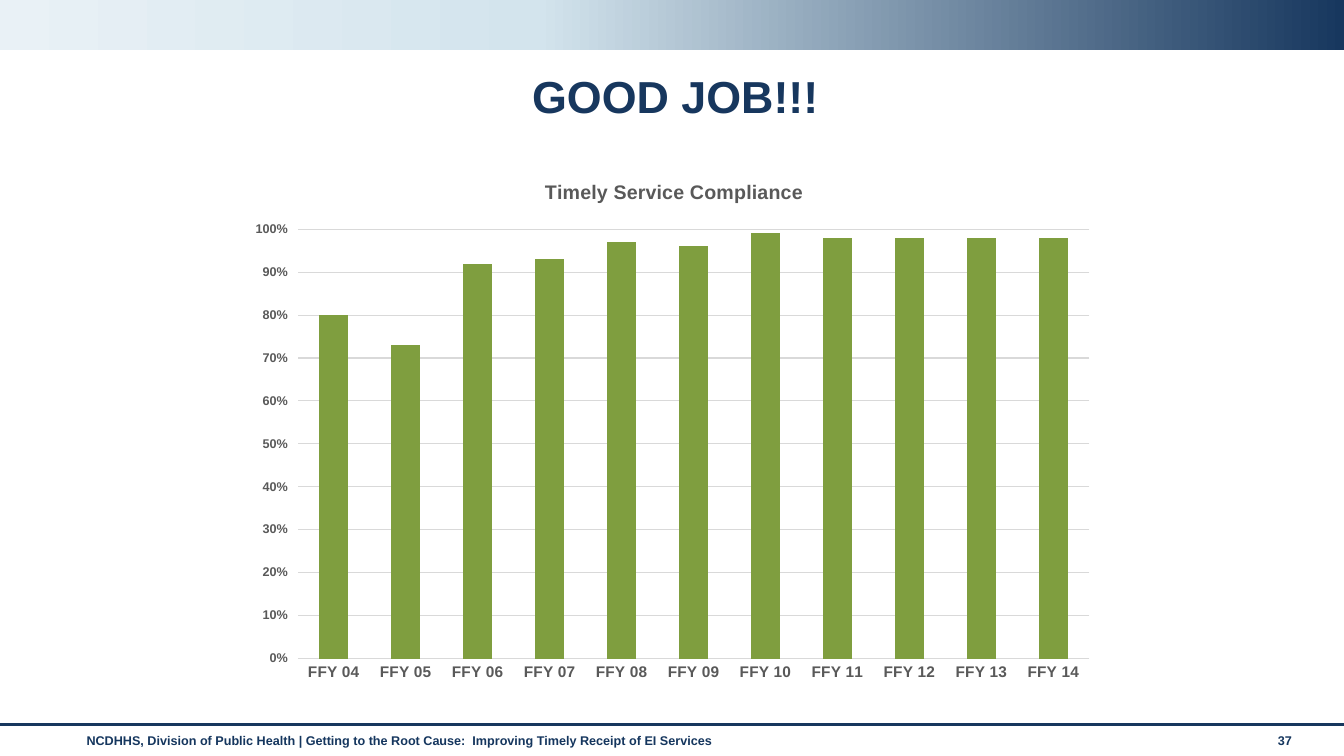
from dataclasses import dataclass

from lxml import etree
from pptx import Presentation
from pptx import util as u
from pptx.chart.data import CategoryChartData
from pptx.dml.color import RGBColor
from pptx.enum import chart as ch, shapes, text
from pptx.oxml import parse_xml
from pptx.oxml.ns import nsdecls, qn


@dataclass(frozen=True)
class Theme:
    font: str = "Arial"
    navy: str = "17375E"
    footer: str = "15365E"
    gray: str = "595959"
    grid: str = "D9D9D9"
    green: str = "7F9E3F"
    band: tuple = ((0, "17375E"), (60, "D3E4ED"), (100, "E9F1F6"))
    title_size: int = 32
    chart_title_size: int = 14
    category_size: int = 11
    small_size: int = 9


class Deck:
    """Draws styled elements on one slide, placed on an 80 by 45 grid."""

    COLS, ROWS = 80, 45

    def __init__(self, theme):
        self.t = theme
        self.prs = Presentation()
        self.prs.slide_width, self.prs.slide_height = u.Inches(13.33), u.Inches(7.5)
        self.s = self.prs.slides.add_slide(self.prs.slide_layouts[6])

    def box(self, col, row, cols, rows):
        w = self.prs.slide_width / self.COLS
        h = self.prs.slide_height / self.ROWS
        return [u.Emu(round(v)) for v in (col * w, row * h, cols * w, rows * h)]

    def style(self, font, size, color):
        font.name, font.size, font.bold = self.t.font, u.Pt(size), True
        font.color.rgb = RGBColor.from_string(color)

    def stroke(self, line, color, width):
        line.color.rgb = RGBColor.from_string(color)
        line.width = u.Pt(width)

    def label(self, place, words, size, color, align=text.PP_ALIGN.LEFT,
              anchor=text.MSO_ANCHOR.TOP, spacing=1.0):
        tf = self.s.shapes.add_textbox(*self.box(*place)).text_frame
        tf.word_wrap, tf.vertical_anchor = True, anchor
        p = tf.paragraphs[0]
        p.alignment, p.line_spacing = align, spacing
        r = p.add_run()
        r.text = words
        self.style(r.font, size, color)

    def gradient_band(self, place, stops, angle):
        sp = self.s.shapes.add_shape(shapes.MSO_SHAPE.RECTANGLE, *self.box(*place))
        sp.shadow.inherit = False
        sp.line.fill.background()
        sp.fill.gradient()
        sp.fill.gradient_angle = angle
        gs_list = next(sp._element.iter(qn("a:gsLst")))
        for gs in list(gs_list):
            gs_list.remove(gs)
        for pos, color in stops:
            gs = etree.SubElement(gs_list, qn("a:gs"), pos=str(pos * 1000))
            etree.SubElement(gs, qn("a:srgbClr"), val=color)

    def rule(self, row, color, width):
        x, y, w, _ = self.box(0, row, self.COLS, 0)
        line = self.s.shapes.add_connector(shapes.MSO_CONNECTOR.STRAIGHT, x, y, x + w, y)
        self.stroke(line.line, color, width)
        etree.SubElement(line._element.spPr, qn("a:effectLst"))

    def chart_layout(self, parent, index, target="", **shares):
        old = parent.find(qn("c:layout"))
        if old is not None:
            parent.remove(old)
        modes = "".join(f'<c:{k}Mode val="edge"/>' for k in "xy")
        values = "".join(f'<c:{k} val="{v}"/>' for k, v in shares.items())
        parent.insert(index, parse_xml(
            f'<c:layout {nsdecls("c")}><c:manualLayout>{target}{modes}{values}'
            '</c:manualLayout></c:layout>'))

    def column_chart(self, place, title, cats, vals):
        data = CategoryChartData(number_format="0%")
        data.categories = cats
        data.add_series("Series 1", vals)
        chart = self.s.shapes.add_chart(
            ch.XL_CHART_TYPE.COLUMN_CLUSTERED, *self.box(*place), data).chart
        chart.has_legend = False
        chart.font.name, chart.font.size, chart.font.bold = self.t.font, u.Pt(10), True

        chart.has_title = True
        r = chart.chart_title.text_frame.paragraphs[0].add_run()
        r.text = title
        self.style(r.font, self.t.chart_title_size, self.t.gray)
        chart.chart_title.include_in_layout = False
        self.chart_layout(chart.chart_title._element, 1, x=0.35, y=0.03)
        self.chart_layout(chart._chartSpace.chart.plotArea, 0,
                          '<c:layoutTarget val="inner"/>', x=0.07, y=0.13, w=0.91, h=0.81)

        plot = chart.plots[0]
        plot.gap_width, plot.overlap, plot.vary_by_categories = 150, -25, False
        fill = plot.series[0].format.fill
        fill.solid()
        fill.fore_color.rgb = RGBColor.from_string(self.t.green)

        cat, val = chart.category_axis, chart.value_axis
        self.style(cat.tick_labels.font, self.t.category_size, self.t.gray)
        self.style(val.tick_labels.font, self.t.small_size, self.t.gray)
        cat.major_tick_mark = ch.XL_TICK_MARK.NONE
        self.stroke(cat.format.line, self.t.grid, 0.75)
        val.minimum_scale, val.maximum_scale, val.major_unit = 0, 1, 0.1
        val.tick_labels.number_format = "0%"
        val.tick_labels.number_format_is_linked = False
        val.format.line.fill.background()
        val.has_major_gridlines = True
        self.stroke(val.major_gridlines.format.line, self.t.grid, 0.75)


def main():
    t = Theme()
    deck = Deck(t)
    deck.gradient_band((0, 0, 80, 3), t.band, 180)
    deck.rule(43.14, t.navy, 1.75)
    deck.label((4.56, 43.32, 69.96, 1.74),
               "NCDHHS, Division of Public Health | Getting to the Root Cause:  "
               "Improving Timely Receipt of EI Services", t.small_size, t.footer)
    deck.label((75.48, 43.32, 3.54, 1.8), "37", t.small_size, t.footer)
    deck.label((5.88, 4.08, 68.64, 3.6), "GOOD JOB!!!", t.title_size, t.navy,
               text.PP_ALIGN.CENTER, text.MSO_ANCHOR.MIDDLE, 0.9)
    deck.column_chart((14.1, 9.54, 51.78, 31.56), "Timely Service Compliance",
                      [f"FFY {year:02}" for year in range(4, 15)],
                      (0.8, 0.73, 0.92, 0.93, 0.97, 0.96, 0.99, 0.98, 0.98, 0.98, 0.98))
    deck.prs.save("out.pptx")


if __name__ == "__main__":
    main()
